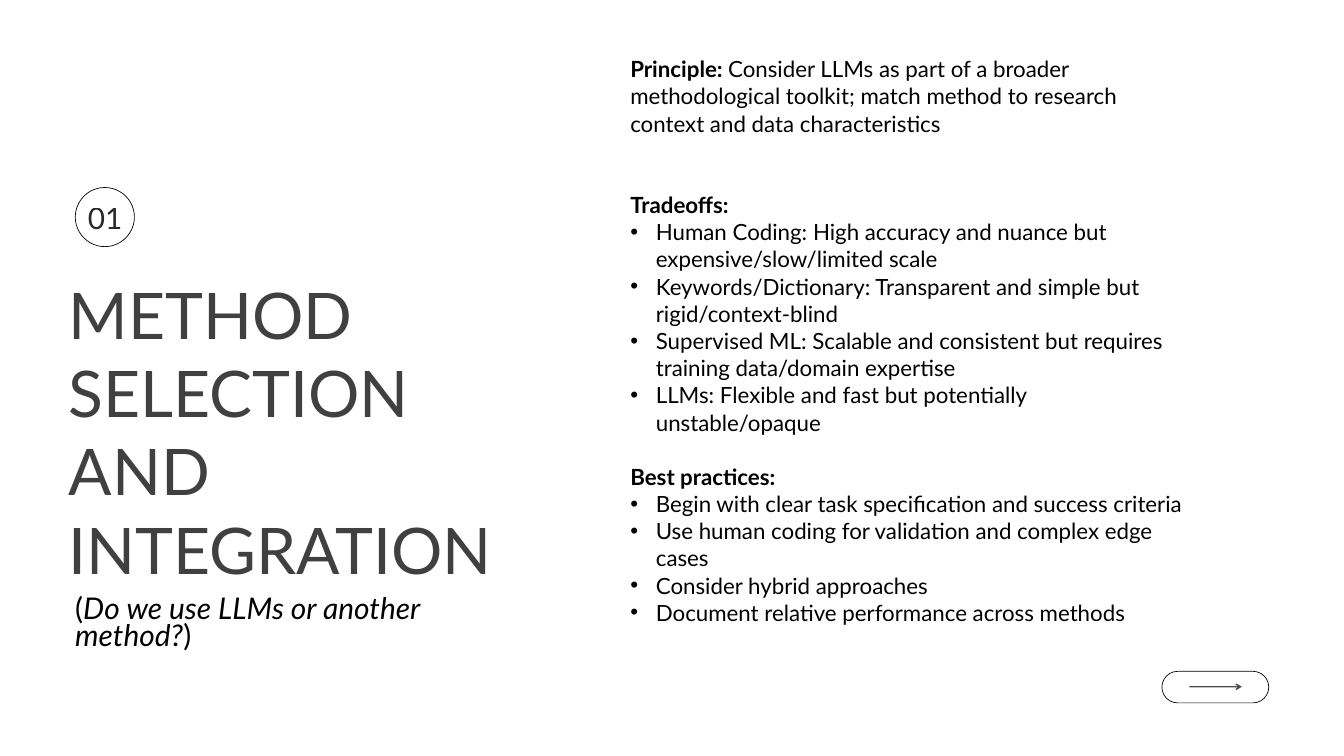
from lxml import etree
from pptx import Presentation
from pptx.dml.color import RGBColor
from pptx.enum.shapes import MSO_CONNECTOR, MSO_SHAPE
from pptx.enum.text import MSO_ANCHOR, MSO_AUTO_SIZE, PP_ALIGN
from pptx.oxml.ns import qn
from pptx.util import Inches, Pt

COLORS = {"text": "000000", "title": "404040", "background": "FFFFFF"}
FONT = "Lato"
BODY_SIZE = 23.9
BODY_LEADING = 29.1
INDENT = 0.38

PRINCIPLE = ("Consider LLMs as part of a broader methodological toolkit; "
             "match method to research context and data characteristics")
SECTIONS = [
    ("Tradeoffs:", 2, [
        "Human Coding: High accuracy and nuance but expensive/slow/limited scale",
        "Keywords/Dictionary: Transparent and simple but rigid/context-blind",
        "Supervised ML: Scalable and consistent but requires training data/domain expertise",
        "LLMs: Flexible and fast but potentially unstable/opaque",
    ]),
    ("Best practices:", 1, [
        "Begin with clear task specification and success criteria",
        "Use human coding for validation and complex edge cases",
        "Consider hybrid approaches",
        "Document relative performance across methods",
    ]),
]


def set_opacity(element, percent):
    for color in element.iter(qn("a:srgbClr")):
        etree.SubElement(color, qn("a:alpha")).set("val", str(percent * 1000))


class SlideBuilder:
    def __init__(self, slide):
        self.s = slide
        fill = slide.background.fill
        fill.solid()
        fill.fore_color.rgb = self.color("background")

    def color(self, name):
        return RGBColor.from_string(COLORS[name])

    def frame(self, sp, box):
        """Place a text shape and return its frame, without margins."""
        sp.left, sp.top, sp.width, sp.height = (Inches(v) for v in box)
        tf = sp.text_frame
        tf.word_wrap = True
        tf.auto_size = MSO_AUTO_SIZE.NONE
        tf.vertical_anchor = MSO_ANCHOR.TOP
        tf.margin_left = tf.margin_right = tf.margin_top = tf.margin_bottom = 0
        return tf

    def text_box(self, box):
        return self.frame(self.s.shapes.add_textbox(0, 0, 0, 0), box)

    def paragraph(self, p, runs, size, leading, color="text",
                  align=PP_ALIGN.LEFT, before=0, bullet=False):
        """Fill p with (text, style) runs; style is '', 'b' or 'i'."""
        p.alignment = align
        p.line_spacing = Pt(leading)
        p.space_before = Pt(before)
        p.space_after = Pt(0)
        pPr = p._p.get_or_add_pPr()
        indent = Inches(INDENT) if bullet else 0
        pPr.set("marL", str(indent))
        pPr.set("indent", str(-indent))
        if bullet:
            etree.SubElement(pPr, qn("a:buFont")).set("typeface", "Arial")
            etree.SubElement(pPr, qn("a:buChar")).set("char", "•")
        else:
            etree.SubElement(pPr, qn("a:buNone"))
        for text, style in runs:
            r = p.add_run()
            r.text = text
            r.font.name = FONT
            r.font.size = Pt(size)
            r.font.bold = style == "b"
            r.font.italic = style == "i"
            r.font.color.rgb = self.color(color)

    def title(self, text, box):
        tf = self.frame(self.s.shapes.title, box)
        self.paragraph(tf.paragraphs[0], [(text, "")], 68.8, 84, "title")

    def body(self, box):
        tf = self.frame(self.s.placeholders[1], box)
        self.paragraph(tf.paragraphs[0], [("Principle: ", "b"), (PRINCIPLE, "")],
                       BODY_SIZE, BODY_LEADING)
        for heading, gap_lines, items in SECTIONS:
            self.paragraph(tf.add_paragraph(), [(heading, "b")], BODY_SIZE,
                           BODY_LEADING, before=gap_lines * BODY_LEADING)
            for item in items:
                self.paragraph(tf.add_paragraph(), [(item, "")], BODY_SIZE,
                               BODY_LEADING, bullet=True)

    def subtitle(self, text, box):
        tf = self.text_box(box)
        self.paragraph(tf.paragraphs[0], [("(", ""), (text, "i"), (")", "")],
                       32, BODY_LEADING)

    def number(self, text, box):
        p = self.text_box(box).paragraphs[0]
        self.paragraph(p, [(text, "")], 31.9, 44.6, align=PP_ALIGN.CENTER)
        set_opacity(p._p, 83)

    def outline(self, kind, box):
        sp = self.s.shapes.add_shape(kind, *(Inches(v) for v in box))
        sp.shadow.inherit = False
        sp.fill.background()
        sp.line.color.rgb = self.color("text")
        sp.line.width = Pt(0.75)
        return sp

    def arrow(self, x1, x2, y):
        line = self.s.shapes.add_connector(
            MSO_CONNECTOR.STRAIGHT, Inches(x1), Inches(y), Inches(x2), Inches(y))
        line.line.color.rgb = self.color("text")
        line.line.width = Pt(1.5)
        spPr = line._element.spPr
        set_opacity(spPr, 71)
        etree.SubElement(spPr.find(qn("a:ln")), qn("a:tailEnd")).set("type", "arrow")
        etree.SubElement(spPr, qn("a:effectLst"))


def main():
    prs = Presentation()
    prs.slide_width = Inches(20)
    prs.slide_height = Inches(11.25)
    b = SlideBuilder(prs.slides.add_slide(prs.slide_layouts[1]))

    b.title("METHOD SELECTION AND INTEGRATION", (1.02, 4.07, 6.87, 4.71))
    b.subtitle("Do we use LLMs or another method?", (1.12, 8.9, 6.66, 0.84))
    b.outline(MSO_SHAPE.OVAL, (1.12, 2.79, 0.88, 0.88))
    b.number("01", (1.2, 2.89, 0.73, 0.6))
    button = b.outline(MSO_SHAPE.ROUNDED_RECTANGLE, (17.29, 9.99, 1.59, 0.47))
    button.adjustments[0] = 0.5
    b.arrow(17.7, 18.48, 10.22)
    b.body((9.38, 0.82, 8.32, 8.94))

    prs.save("out.pptx")


if __name__ == "__main__":
    main()
